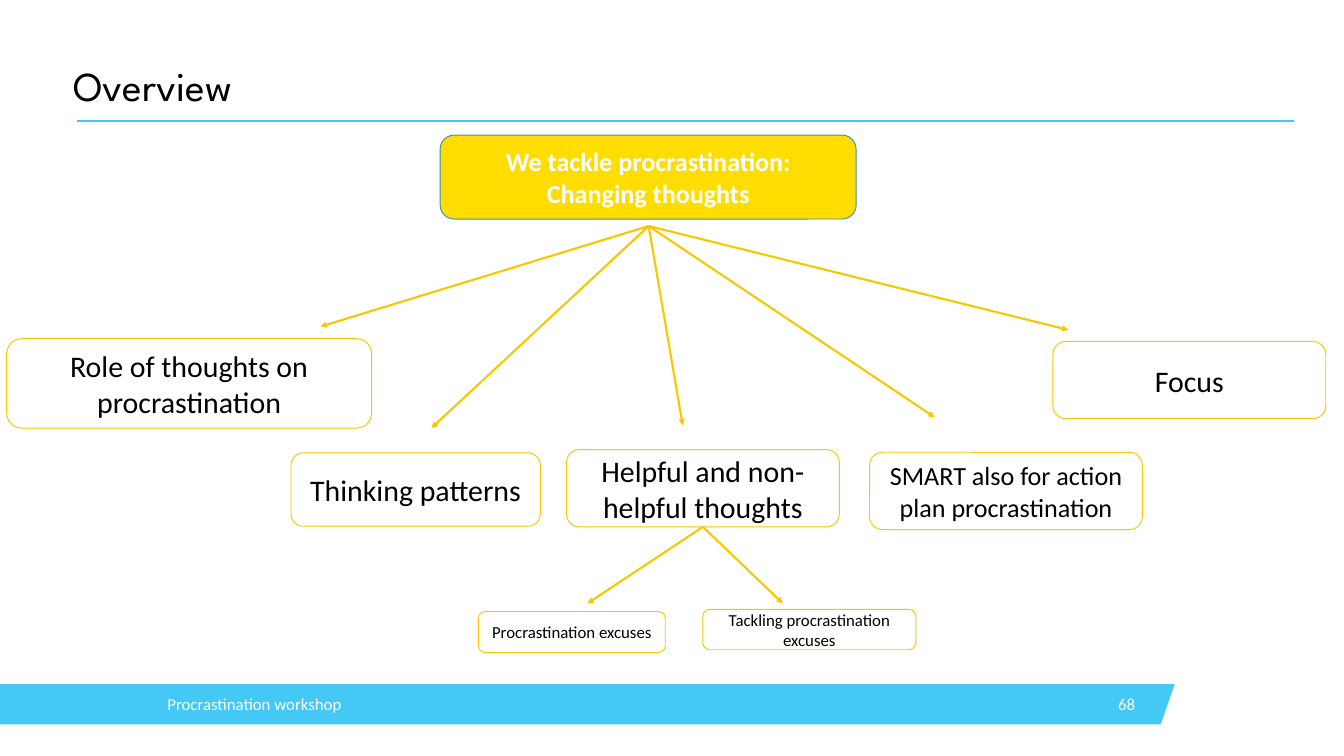
from lxml import etree
from pptx import Presentation
from pptx import util as u
from pptx.dml import color
from pptx.enum import shapes, text
from pptx.oxml import ns

Pt = u.Pt
SKY, GOLD, WHITE, BLACK = "44C8F5", "F9C700", "FFFFFF", "000000"


def rgb(code):
    """Turn a hex string into a colour."""
    return color.RGBColor.from_string(code)


def paint(shape, fill, line=None):
    """Give a shape its fill and outline, without a shadow."""
    shape.shadow.inherit = False
    shape.fill.solid()
    shape.fill.fore_color.rgb = rgb(fill)
    if line:
        shape.line.color.rgb = rgb(line)
        shape.line.width = Pt(1)
    else:
        shape.line.fill.background()


def write(shape, lines, size, ink, align="LEFT", face="Calibri", bold=False, inset=None, space=None):
    """Fill a shape with formatted lines of text."""
    frame = shape.text_frame
    frame.word_wrap = True
    frame.auto_size = text.MSO_AUTO_SIZE.NONE
    frame.vertical_anchor = text.MSO_ANCHOR.MIDDLE
    if inset is not None:
        for side in ("left", "top", "right", "bottom"):
            setattr(frame, "margin_" + side, Pt(inset))
    frame.text = "\n".join(lines)
    for para in frame.paragraphs:
        para.alignment = getattr(text.PP_ALIGN, align)
        if space:
            para.line_spacing = space
        for key, value in {"name": face, "size": Pt(size), "bold": bold}.items():
            setattr(para.font, key, value)
        para.font.color.rgb = rgb(ink)


def join(slide, start, end, ink, arrow=True):
    """Draw a straight line, with an arrowhead at its end if asked."""
    ends = [Pt(v) for v in (*start, *end)]
    line = slide.shapes.add_connector(shapes.MSO_CONNECTOR.STRAIGHT, *ends)
    line.line.color.rgb = rgb(ink)
    line.line.width = Pt(2.25)
    if arrow:
        pen = line.line._get_or_add_ln()
        etree.SubElement(pen, ns.qn("a:tailEnd"), type="triangle")
    etree.SubElement(line._element.spPr, ns.qn("a:effectLst"))
    return line


def node(slide, kind, box, lines, size, fill=WHITE, edge=GOLD, ink=BLACK, bold=False):
    """Draw one labelled box of the tree."""
    shape = slide.shapes.add_shape(kind, *[Pt(v) for v in box])
    paint(shape, fill, edge)
    write(shape, lines, size, ink, "CENTER", bold=bold)
    return shape


def header(slide, box, label):
    """Place the title and the rule below it."""
    x, y, w, h = box
    title = slide.shapes.title
    for key, value in zip(("left", "top", "width", "height"), box):
        setattr(title, key, Pt(value))
    write(title, [label], 44, BLACK, face="League Spartan", inset=0, space=0.9)
    join(slide, (x + 3.6, y + h + 10), (x + w + 2.2, y + h + 10), SKY, False)


def footer(slide, box, label, number):
    """Draw the slanted band with its label and page number."""
    x, y, w, h = box
    form = slide.shapes.build_freeform(Pt(x), Pt(y))
    form.add_line_segments([(Pt(x + w), Pt(y)), (Pt(x + w - 15), Pt(y + h)), (Pt(x), Pt(y + h))])
    paint(form.convert_to_shape(), SKY)
    parts = ((179.3, 486, label, "LEFT", 0), (1144.8, 78.5, number, "RIGHT", None))
    for left, wide, words, align, inset in parts:
        area = slide.shapes.add_textbox(Pt(x + left), Pt(y), Pt(wide), Pt(h))
        write(area, [words], 18, WHITE, align, inset=inset)


def tree(slide, box):
    """Draw the topic, its five branches and the two leaves."""
    x, y, w, h = box
    kinds = shapes.MSO_SHAPE
    node(slide, kinds.FLOWCHART_ALTERNATE_PROCESS, (x + 471.6, y, 445.7, 90),
         ["We tackle procrastination:", "Changing thoughts"], 28, "FFDD00", "3294B5", WHITE, True)
    wide, tall = 292.3, 82.8
    topics = (
        ("Role of thoughts on procrastination", 32, (7.2, 218.2, 391, 95.8), (343.4, 205.2)),
        ("Thinking patterns", 32, (311.8, 340.6, 267.1, 78.5), (462.2, 314)),
        ("Helpful and non-helpful thoughts", 32, (607, 337, wide, tall), (731.5, 311)),
        ("SMART also for action plan procrastination", 28, (931.7, 339.9, wide, tall), (1001.5, 302.4)),
        ("Focus", 32, (1128.2, 321.1 - 100, wide, tall), (1144.8, 208.8)),
    )
    made = {}
    for label, size, (left, top, *dims), (tipx, tipy) in topics:
        made[label] = node(slide, kinds.ROUNDED_RECTANGLE, (x + left, y + top, *dims), [label], size)
        join(slide, (x + 695, y + 97.5), (x + tipx, y + tipy), GOLD)
    root = made["Helpful and non-helpful thoughts"]
    leaves = (
        ("Procrastination excuses", (512.6, 510.5, 200.2, 43.9), 629.3),
        ("Tackling procrastination excuses", (753.1, 508.3, 228.2, 43.2), 838.8),
    )
    for label, (left, top, *dims), tip in leaves:
        node(slide, kinds.ROUNDED_RECTANGLE, (x + left, y + top, *dims), [label], 18)
        line = join(slide, (x + 753.1, y + 419.8), (x + tip, y + 501.9), GOLD)
        line.begin_connect(root, 2)


def main():
    """Build the overview slide and save it."""
    deck = Presentation()
    deck.slide_width, deck.slide_height = Pt(1440), Pt(810)
    slide = deck.slides.add_slide(deck.slide_layouts[5])
    footer(slide, (0, 733, 1258.6, 43.2), "Procrastination workshop", "68")
    header(slide, (78.5, 69.8, 1305.4, 49.7), "Overview")
    tree(slide, (0, 144.7, 1440, 554.4))
    deck.save("out.pptx")


if __name__ == "__main__":
    main()
